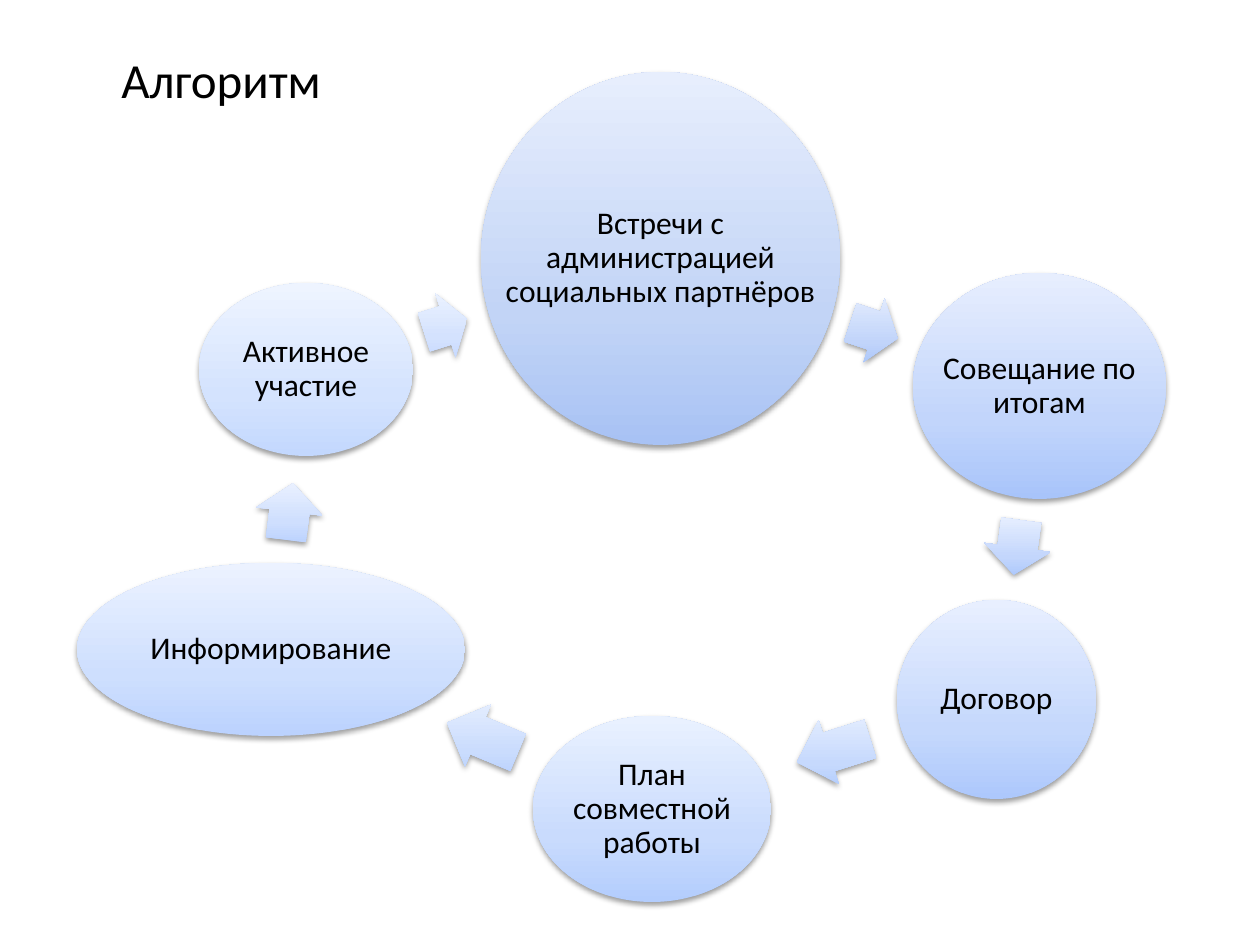
from pptx import Presentation
from pptx import util as u
from pptx.dml.color import RGBColor
from pptx.enum import shapes, text
from pptx.oxml import parse_xml
from pptx.oxml import ns

PX = u.Inches(1) / 126
BLACK = RGBColor(0x00, 0x00, 0x00)
FONT = "Calibri"

# Each step: label, ellipse frame, its gradient (dark, middle, light),
# then the frame, turn and gradient of the arrow to the next step.
STEPS = [
    ("Встречи с администрацией социальных партнёров",
     (481, 72, 359, 373), ("A8C2F4", "C2D4F6", "E7EEFD"),
     (849, 297, 50, 67), 18.5, ("A5C3FA", "C1D4FA", "E6EEFE")),
    ("Совещание по итогам",
     (913, 273, 253, 226), ("A8C4FA", "C2D5FB", "E7EEFE"),
     (990, 514, 55, 67), 97.9, ("A9C6FC", "C3D6FC", "E7EFFF")),
    ("Договор",
     (897, 600, 199, 199), ("ADC8FC", "C5D8FC", "E8EFFF"),
     (795, 717, 77, 67), 162.4, ("AECAFD", "C6D9FD", "E8F0FF")),
    ("План совместной работы",
     (533, 716, 238, 186), ("B3CDFD", "C9DBFD", "E9F1FF"),
     (444, 704, 77, 67), 202.7, ("B4CEFE", "CADCFD", "EAF1FF")),
    ("Информирование",
     (77, 563, 388, 173), ("BBD2FE", "CEDFFE", "ECF2FF"),
     (261, 478, 57, 67), 277.2, ("BBD2FE", "CFDFFE", "ECF2FF")),
    ("Активное участие",
     (199, 283, 214, 173), ("C3D8FE", "D4E3FE", "EEF4FF"),
     (423, 292, 45, 67), 342.5, ("C3D7FF", "D4E2FE", "EEF4FF")),
]


def px(*lengths):
    return [round(length * PX) for length in lengths]


class CyclePage:
    """Holds the style and the slide that elements are added to."""

    def __init__(self, page):
        self.page = page

    def label(self, box, words, size):
        frame = box.text_frame
        frame.word_wrap = True
        frame.vertical_anchor = text.MSO_ANCHOR.MIDDLE
        para = frame.paragraphs[0]
        para.alignment = text.PP_ALIGN.CENTER
        span = para.add_run()
        span.text = words
        span.font.name = FONT
        span.font.size = u.Pt(size)
        span.font.color.rgb = BLACK
        return para

    def title(self, words, frame):
        box = self.page.shapes.title
        box.left, box.top, box.width, box.height = px(*frame)
        self.label(box, words, 28)

    def solid(self, kind, frame, colors):
        """Add a borderless shape, upright gradient from bottom to top, soft shadow."""
        shape = self.page.shapes.add_shape(kind, *px(*frame))
        shape.line.fill.background()
        shape.shadow.inherit = False
        stops = "".join(
            f'<a:gs pos="{position}"><a:srgbClr val="{color}"/></a:gs>'
            for position, color in zip((0, 35000, 100000), colors))
        properties = shape._element.spPr
        properties.find(ns.qn("a:prstGeom")).addnext(parse_xml(
            f'<a:gradFill {ns.nsdecls("a")} rotWithShape="0"><a:gsLst>{stops}</a:gsLst>'
            '<a:lin ang="16200000" scaled="0"/></a:gradFill>'))
        properties.find(ns.qn("a:effectLst")).append(parse_xml(
            f'<a:outerShdw {ns.nsdecls("a")} blurRad="40000" dist="20000" dir="5400000" '
            'rotWithShape="0"><a:srgbClr val="000000"><a:alpha val="38000"/></a:srgbClr>'
            '</a:outerShdw>'))
        return shape

    def step(self, words, frame, colors):
        """Add an ellipse; its label uses the full width, so it is a box of its own."""
        self.solid(shapes.MSO_SHAPE.OVAL, frame, colors)
        box = self.page.shapes.add_textbox(*px(*frame))
        inset = px(4)[0]
        area = box.text_frame
        area.margin_left = area.margin_top = inset
        area.margin_right = area.margin_bottom = inset
        self.label(box, words, 18).line_spacing = 0.9

    def arrow(self, frame, turn, colors):
        shape = self.solid(shapes.MSO_SHAPE.RIGHT_ARROW, frame, colors)
        shape.adjustments[0] = 0.6
        shape.adjustments[1] = 0.5
        shape.rotation = turn


def main():
    deck = Presentation()
    deck.slide_width, deck.slide_height = u.Inches(10), u.Inches(7.5)
    cycle = CyclePage(deck.slides.add_slide(deck.slide_layouts[5]))
    cycle.title("Алгоритм", (53, 0, 336, 158))
    for words, frame, colors, arrow_frame, turn, arrow_colors in STEPS:
        cycle.step(words, frame, colors)
        cycle.arrow(arrow_frame, turn, arrow_colors)
    deck.save("out.pptx")


if __name__ == "__main__":
    main()
